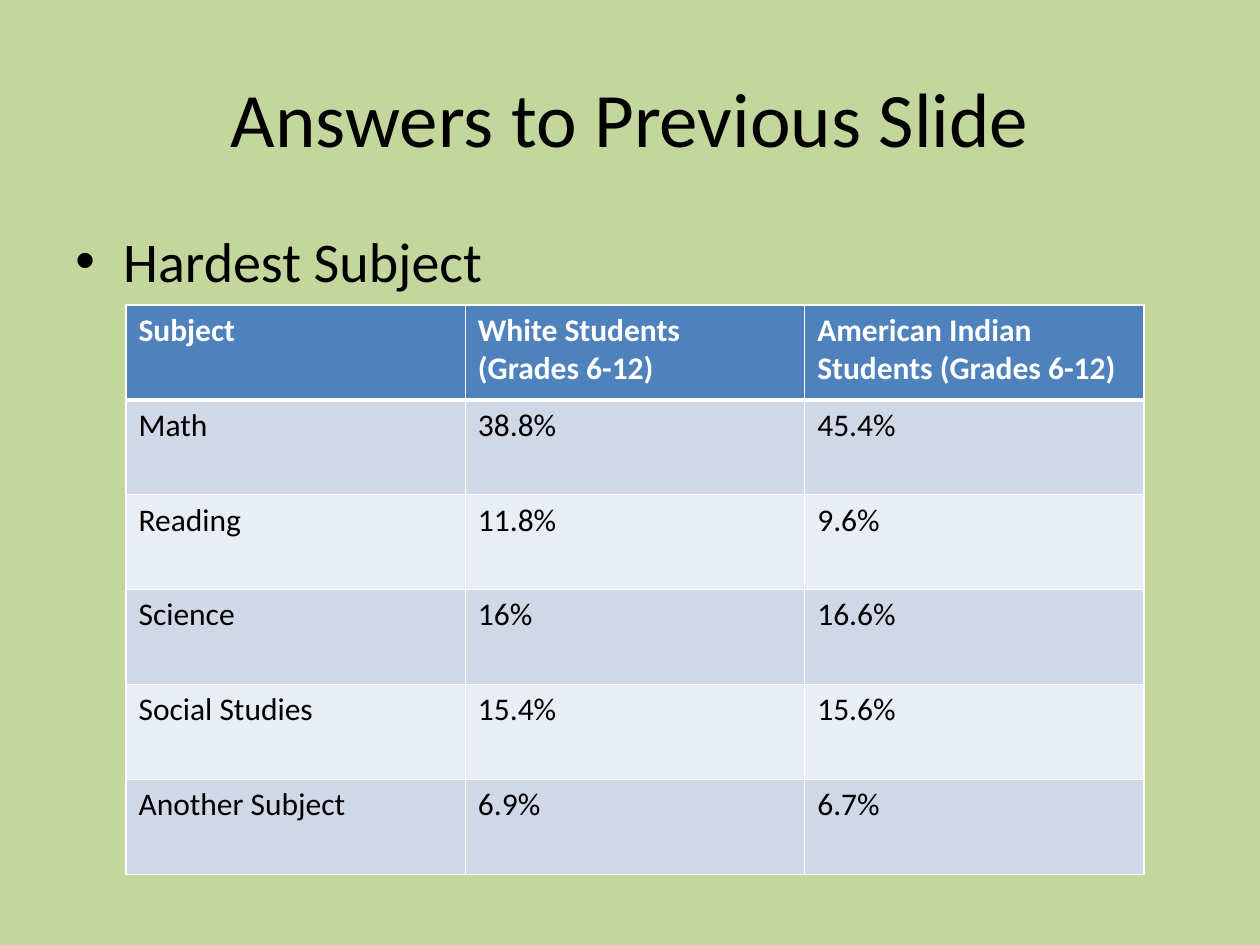
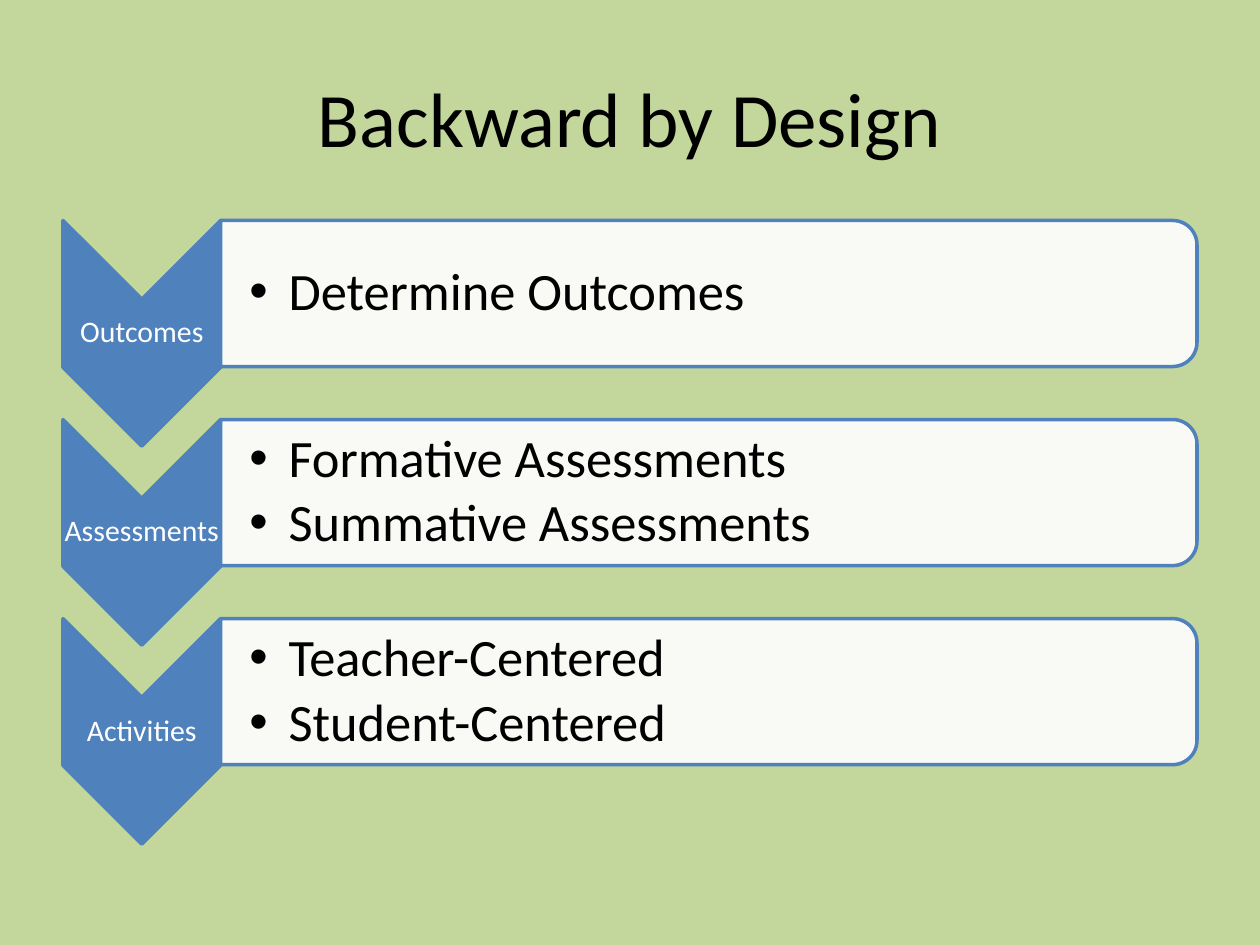
from lxml import etree
from pptx import Presentation
from pptx import util as u
from pptx.dml.color import RGBColor
from pptx.enum import shapes, text
from pptx.oxml import ns

GREEN = RGBColor(0xC3, 0xD6, 0x9B)
BLUE = RGBColor(0x4F, 0x81, 0xBD)
WHITE = RGBColor(0xFF, 0xFF, 0xFF)
BLACK = RGBColor(0, 0, 0)
BANDS = [RGBColor(0xE9, 0xED, 0xF4), RGBColor(0xD0, 0xD8, 0xE8)]

COLUMNS, ROWS = 40, 30

TITLE = {"size": u.Pt(44)}
BODY = {"size": u.Pt(32)}
CELL = {"size": u.Pt(18)}
HEADER = {"size": u.Pt(18), "bold": True}
STEP = {"size": u.Pt(17)}
DETAIL = {"size": u.Pt(30)}
STEP_SPACING = {"line_spacing": 0.9, "space_after": u.Pt(6)}
DETAIL_SPACING = {"line_spacing": 0.9, "space_after": u.Pt(4.5)}
CENTERED = {"alignment": text.PP_ALIGN.CENTER}

SUBJECTS = [
    ["Subject", "White Students\n(Grades 6-12)", "American Indian Students (Grades 6-12)"],
    ["Math", "38.8%", "45.4%"],
    ["Reading", "11.8%", "9.6%"],
    ["Science", "16%", "16.6%"],
    ["Social Studies", "15.4%", "15.6%"],
    ["Another Subject", "6.9%", "6.7%"],
]
STEPS = [
    ("Outcomes", ["Determine Outcomes"]),
    ("Assessments", ["Formative Assessments", "Summative Assessments"]),
    ("Activities", ["Teacher-Centered", "Student-Centered"]),
]


def apply(target, values):
    for name, value in values.items():
        setattr(target, name, value)


def add_xml(parent, tag, **attributes):
    return etree.SubElement(parent, ns.qn(tag), attributes)


class Deck:
    def __init__(self):
        self.show = Presentation()
        apply(self.show, {"slide_width": u.Inches(10), "slide_height": u.Inches(7.5)})
        self.page = None

    def place(self, left, top, width, height):
        column = self.show.slide_width / COLUMNS
        row = self.show.slide_height / ROWS
        return [u.Emu(round(n)) for n in (left * column, top * row, width * column, height * row)]

    def new_page(self, title):
        self.page = self.show.slides.add_slide(self.show.slide_layouts[6])
        fill = self.page.background.fill
        fill.solid()
        fill.fore_color.rgb = GREEN
        self.label([title], (2, 1.2, 36, 5), TITLE, CENTERED, anchor=text.MSO_ANCHOR.MIDDLE)

    def fill_text(self, frame, lines, font, color=BLACK, spacing=None, indent=None):
        for number, line in enumerate(lines):
            para = frame.add_paragraph() if number else frame.paragraphs[0]
            apply(para, spacing or {})
            span = para.add_run()
            span.text = line
            apply(span.font, {"name": "Calibri", **font})
            span.font.color.rgb = color
            if indent:
                properties = para._p.get_or_add_pPr()
                properties.set("marL", str(u.Inches(indent)))
                properties.set("indent", str(-u.Inches(indent)))
                add_xml(properties, "a:buFont", typeface="Arial")
                add_xml(properties, "a:buChar", char="•")

    def label(self, lines, area, font, spacing=None, color=BLACK, indent=None,
              anchor=text.MSO_ANCHOR.TOP, insets=(0.1, 0.05, 0.1, 0.05)):
        box = self.page.shapes.add_textbox(*self.place(*area))
        frame = box.text_frame
        sides = ("margin_left", "margin_top", "margin_right", "margin_bottom")
        margins = dict(zip(sides, map(u.Inches, insets)))
        apply(frame, {"word_wrap": True, "vertical_anchor": anchor, **margins})
        self.fill_text(frame, lines, font, color, spacing, indent)

    def turned_shape(self, kind, area, color, opacity=100):
        left, top, width, height = self.place(*area)
        shift = (width - height) // 2
        shape = self.page.shapes.add_shape(kind, left + shift, top - shift, height, width)
        shape.rotation = 90
        shape.shadow.inherit = False
        shape.fill.solid()
        shape.fill.fore_color.rgb = color
        shape.line.color.rgb = BLUE
        shape.line.width = u.Pt(2)
        if opacity < 100:
            tint = shape._element.spPr.find(ns.qn("a:solidFill"))[0]
            add_xml(tint, "a:alpha", val=str(opacity * 1000))

    def border(self, cell, **widths):
        properties = cell._tc.get_or_add_tcPr()
        for side in "LRTB":
            line = add_xml(properties, f"a:ln{side}", w=str(u.Pt(widths.get(side, 1))))
            add_xml(add_xml(line, "a:solidFill"), "a:srgbClr", val=str(WHITE))

    def table(self, values, area):
        grid = self.page.shapes.add_table(len(values), len(values[0]), *self.place(*area)).table
        for r, row in enumerate(values):
            for c, value in enumerate(row):
                cell = grid.cell(r, c)
                self.border(cell, T=3 if r == 1 else 1, B=1 if r else 3)
                cell.fill.solid()
                cell.fill.fore_color.rgb = BANDS[r % 2] if r else BLUE
                font, color = (CELL, BLACK) if r else (HEADER, WHITE)
                self.fill_text(cell.text_frame, value.split("\n"), font, color)

    def step(self, name, details, top):
        middle = text.MSO_ANCHOR.MIDDLE
        self.turned_shape(shapes.MSO_SHAPE.CHEVRON, (2, top, 5, 7.16), BLUE)
        self.label([name], (2, top + 2.5, 5, 2.16), STEP, {**CENTERED, **STEP_SPACING},
                   WHITE, anchor=middle, insets=[0.01] * 4)
        self.turned_shape(shapes.MSO_SHAPE.ROUND_2_SAME_RECTANGLE, (7, top, 31, 4.64), WHITE, 90)
        self.label(details, (7, top + 0.22, 30.76, 4.2), DETAIL, DETAIL_SPACING,
                   indent=0.31, anchor=middle, insets=(0.23, 0.02, 0.02, 0.02))

    def save(self):
        self.show.save("out.pptx")


def main():
    deck = Deck()
    deck.new_page("Answers to Previous Slide")
    deck.label(["Hardest Subject"], (2, 7, 36, 19.8), BODY, indent=0.38)
    deck.table(SUBJECTS, (4, 9.68, 32.32, 18.08))

    deck.new_page("Backward by Design")
    for number, (name, details) in enumerate(STEPS):
        deck.step(name, details, 7 + number * 6.32)
    deck.save()


if __name__ == "__main__":
    main()
